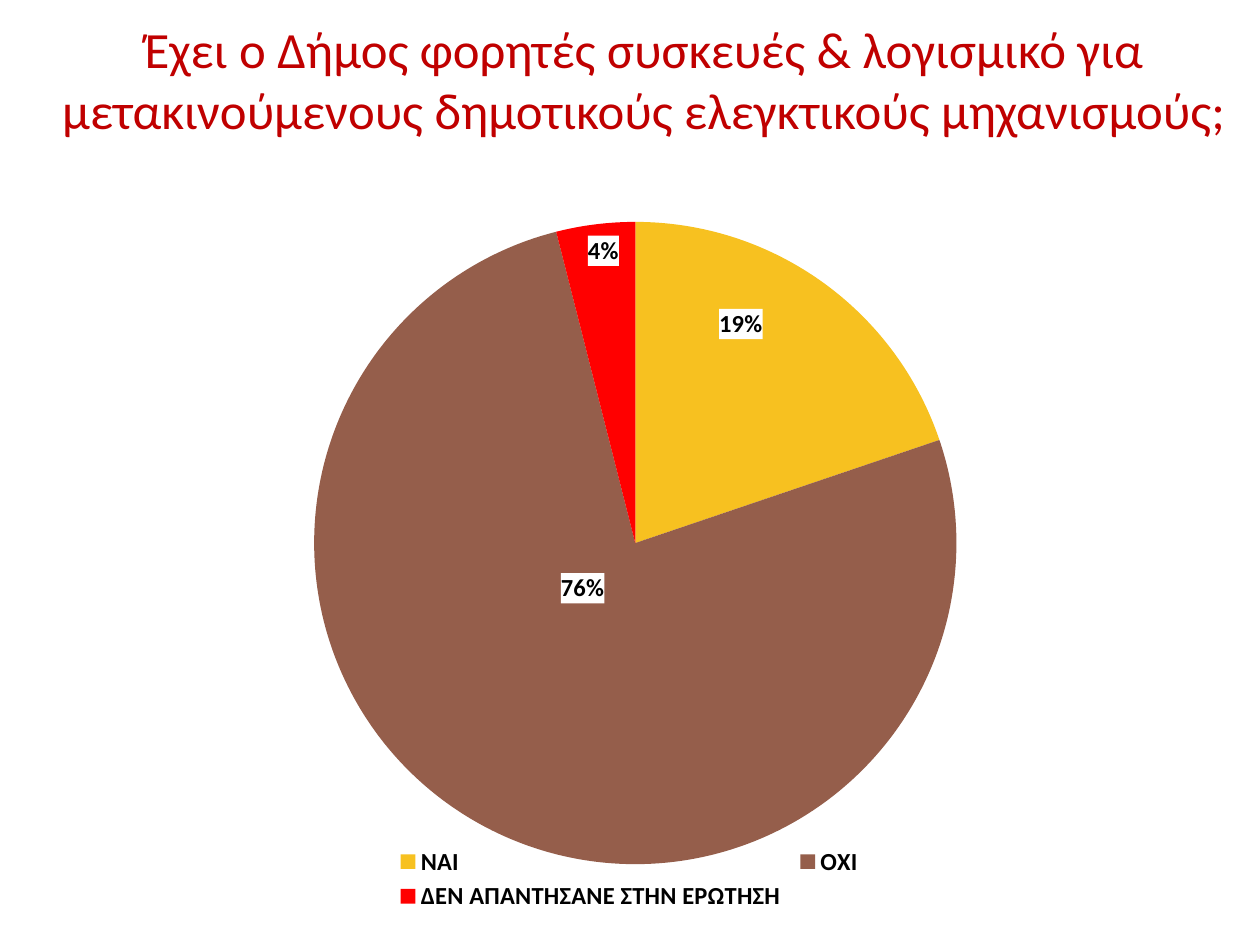
import dataclasses

import pptx
import pptx.chart.data
import pptx.dml.color
import pptx.enum.chart
import pptx.enum.text
import pptx.oxml
import pptx.oxml.ns
import pptx.util
from pptx.util import Inches


@dataclasses.dataclass(frozen=True)
class Theme:
    """Colours, font and type sizes of the slide."""
    font: str = "Calibri"
    title: str = "C00000"
    text: str = "000000"
    label_fill: str = "FFFFFF"
    title_size: int = 29
    chart_size: int = 14


THEME = Theme()
TITLE = "Έχει ο Δήμος φορητές συσκευές & λογισμικό για μετακινούμενους δημοτικούς ελεγκτικούς μηχανισμούς;"
ANSWERS = [
    ("ΝΑΙ", 0.2, "19%", "F7C120", (0.01, -0.12)),
    ("ΟΧΙ", 0.77, "76%", "955E4B", (0.02, -0.13)),
    ("ΔΕΝ ΑΠΑΝΤΗΣΑΝΕ ΣΤΗΝ ΕΡΩΤΗΣΗ", 0.04, "4%", "FF0000", (-0.01, -0.18)),
]


def style_font(font, size, color, bold=False):
    """Set the theme font with a size, colour and weight."""
    font.name = THEME.font
    font.size = pptx.util.Pt(size)
    font.bold = bold
    font.color.rgb = pptx.dml.color.RGBColor.from_string(color)


def chart_element(body):
    """Parse one chart element with its namespaces declared."""
    tag, rest = body.split(">", 1)
    return pptx.oxml.parse_xml(f"{tag} {pptx.oxml.ns.nsdecls('c', 'a')}>{rest}")


def manual_layout(**settings):
    """Return a manual layout made of the given settings."""
    items = "".join(f'<c:{name} val="{value}"/>' for name, value in settings.items())
    return chart_element(f"<c:layout><c:manualLayout>{items}</c:manualLayout></c:layout>")


def replace_layout(parent, layout, previous_tag=None):
    """Put a layout after the named child, or first, in place of any other."""
    for old in parent.findall(pptx.oxml.ns.qn("c:layout")):
        parent.remove(old)
    if previous_tag:
        parent.find(pptx.oxml.ns.qn(previous_tag)).addnext(layout)
    else:
        parent.insert(0, layout)


def add_title(slide, left, top, width, height):
    """Write the centred question in its box."""
    frame = slide.shapes.add_textbox(left, top, width, height).text_frame
    frame.word_wrap = True
    frame.vertical_anchor = pptx.enum.text.MSO_ANCHOR.MIDDLE
    paragraph = frame.paragraphs[0]
    paragraph.text = TITLE
    paragraph.alignment = pptx.enum.text.PP_ALIGN.CENTER
    style_font(paragraph.font, THEME.title_size, THEME.title)


def style_labels(labels):
    """Set the shared content and type of the slice labels."""
    labels.show_value = True
    labels.show_percentage = True
    labels.show_category_name = True
    labels.show_series_name = True
    labels.number_format = "0%"
    labels.number_format_is_linked = False
    style_font(labels.font, THEME.chart_size, THEME.text, True)


def label_point(point, text, color, offset):
    """Colour a slice and give it a boxed label moved by an offset."""
    point.format.fill.solid()
    point.format.fill.fore_color.rgb = pptx.dml.color.RGBColor.from_string(color)
    label = point.data_label
    paragraph = label.text_frame.paragraphs[0]
    paragraph.text = text
    run = paragraph.runs[0]
    style_font(run.font, THEME.chart_size, THEME.text, True)
    label.position = pptx.enum.chart.XL_LABEL_POSITION.CENTER
    element = run._r.xpath("ancestor::c:dLbl")[0]
    replace_layout(element, manual_layout(x=offset[0], y=offset[1]), "c:idx")
    element.find(pptx.oxml.ns.qn("c:tx")).addnext(chart_element(
        f'<c:spPr><a:solidFill><a:srgbClr val="{THEME.label_fill}"/></a:solidFill></c:spPr>'))


def add_answer_chart(slide, left, top, width, height):
    """Draw the pie of answers with its legend in the given box."""
    data = pptx.chart.data.CategoryChartData(number_format="0%")
    data.categories = [answer[0] for answer in ANSWERS]
    data.add_series("", [answer[1] for answer in ANSWERS])
    chart = slide.shapes.add_chart(
        pptx.enum.chart.XL_CHART_TYPE.PIE, left, top, width, height, data).chart
    chart.has_title = False
    style_font(chart.font, THEME.chart_size, THEME.text, True)
    plot = chart.plots[0]
    plot.vary_by_categories = True
    series = plot.series[0]
    style_labels(series.data_labels)
    for index, (_, _, text, color, offset) in enumerate(ANSWERS):
        label_point(series.points[index], text, color, offset)
    chart.has_legend = True
    legend = chart.legend
    legend.position = pptx.enum.chart.XL_LEGEND_POSITION.BOTTOM
    legend.include_in_layout = True
    style_font(legend.font, THEME.chart_size, THEME.text, True)
    replace_layout(legend._element, manual_layout(
        xMode="edge", yMode="edge", x=0.3, y=0.9, w=0.4, h=0.1), "c:legendPos")
    replace_layout(chart._chartSpace.chart.plotArea, manual_layout(
        layoutTarget="inner", xMode="edge", yMode="edge", x=0.03, y=0.06, w=0.95, h=0.87))


def main():
    """Build and save the slide."""
    presentation = pptx.Presentation()
    presentation.slide_width = Inches(10)
    presentation.slide_height = Inches(7.5)
    slide = presentation.slides.add_slide(presentation.slide_layouts[6])
    add_title(slide, Inches(0.23), Inches(0), Inches(9.77), Inches(1.25))
    add_answer_chart(slide, Inches(0.23), Inches(1.41), Inches(9.53), Inches(5.86))
    presentation.save("out.pptx")


if __name__ == "__main__":
    main()
